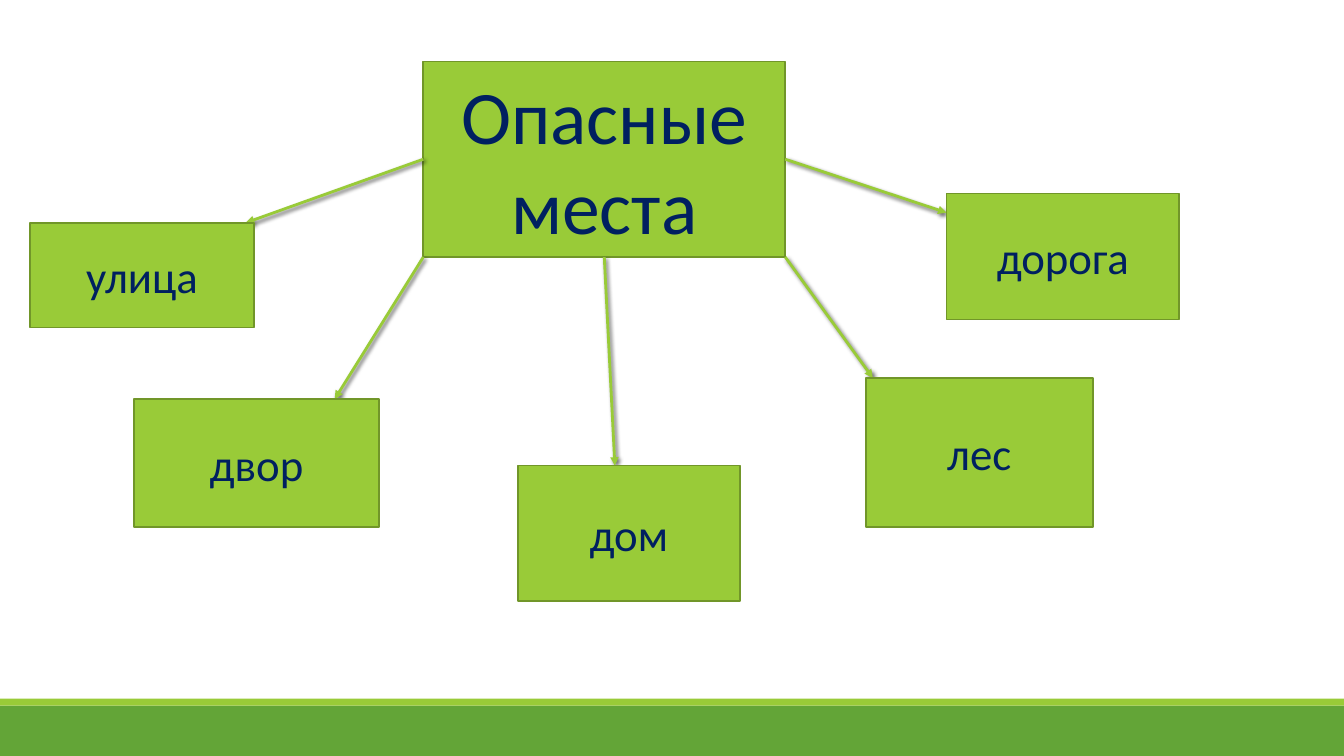
from lxml import etree
from pptx import Presentation
from pptx.dml.color import RGBColor
from pptx.enum.shapes import MSO_CONNECTOR, MSO_SHAPE
from pptx.enum.text import MSO_ANCHOR, PP_ALIGN
from pptx.oxml import parse_xml
from pptx.oxml.ns import nsdecls, qn
from pptx.util import Pt

WIDTH, HEIGHT = 960, 540
COLOURS = {"band": "63A537", "lime": "99CB38", "outline": "719629",
           "text": "002060", "shadow": "000000", "background": "FFFFFF"}
TOPIC_BOX = (302.4, 43.9, 258.5, 139.7)

# Name, box, start as a share of the topic box, arrow tip as an offset in the box
PLACES = [
    ("улица", (21.6, 159.1, 159.8, 74.9), (0, 0.5), (154, 0)),
    ("двор", (95.8, 285.1, 175, 91.4), (0, 1), (143.3, 0)),
    ("дом", (370.1, 332.6, 158.4, 96.5), (0.5, 1), (69.1, 0)),
    ("лес", (618.5, 270, 162, 106.6), (1, 1), (5, 0)),
    ("дорога", (676.1, 138.2, 166.3, 90), (1, 0.5), (0, 13.7)),
]

SHADOW_XML = f"""<a:effectLst {nsdecls("a")}>
  <a:outerShdw blurRad="{Pt(3)}" dist="{Pt(2)}" dir="2700000" rotWithShape="0">
    <a:srgbClr val="{COLOURS["shadow"]}"><a:alpha val="60000"/></a:srgbClr>
  </a:outerShdw>
</a:effectLst>"""


def colour(name):
    return RGBColor.from_string(COLOURS[name])


def set_format(target, values):
    for name, value in values.items():
        setattr(target, name, value)


def add_rectangle(slide, box, fill):
    shape = slide.shapes.add_shape(MSO_SHAPE.RECTANGLE, *map(Pt, box))
    shape.shadow.inherit = False
    shape.fill.solid()
    shape.fill.fore_color.rgb = colour(fill)
    shape.line.fill.background()
    return shape


def add_label(slide, box, text, size):
    shape = add_rectangle(slide, box, "lime")
    shape.line.color.rgb = colour("outline")
    shape.line.width = Pt(1.25)
    frame = shape.text_frame
    set_format(frame, {"word_wrap": True, "vertical_anchor": MSO_ANCHOR.MIDDLE})
    paragraph = frame.paragraphs[0]
    paragraph.alignment = PP_ALIGN.CENTER
    run = paragraph.add_run()
    run.text = text
    set_format(run.font, {"name": "Calibri", "size": Pt(size)})
    run.font.color.rgb = colour("text")


def add_arrow(slide, start, end):
    connector = slide.shapes.add_connector(MSO_CONNECTOR.STRAIGHT, *map(Pt, start + end))
    connector.line.color.rgb = colour("lime")
    connector.line.width = Pt(2)
    line = connector.line._get_or_add_ln()
    etree.SubElement(line, qn("a:tailEnd"), type="triangle")
    line.addnext(parse_xml(SHADOW_XML))


def add_footer(slide, box):
    left, top, width, height = box
    stripe = 5
    add_rectangle(slide, (left, top + stripe, width, height - stripe), "band")
    add_rectangle(slide, (left, top, width, stripe), "lime")


def add_diagram(slide, box):
    left, top, width, height = box
    add_label(slide, box, "Опасные места", 54)

    # Arrows lie beneath the place boxes
    for _, place, (across, down), (tip_x, tip_y) in PLACES:
        start = (left + across * width, top + down * height)
        add_arrow(slide, start, (place[0] + tip_x, place[1] + tip_y))
    for name, place, _, _ in PLACES:
        add_label(slide, place, name, 32)


def main():
    presentation = Presentation()
    set_format(presentation, {"slide_width": Pt(WIDTH), "slide_height": Pt(HEIGHT)})
    slide = presentation.slides.add_slide(presentation.slide_layouts[6])
    slide.background.fill.solid()
    slide.background.fill.fore_color.rgb = colour("background")
    add_footer(slide, (0, 499, WIDTH, 41))
    add_diagram(slide, TOPIC_BOX)
    presentation.save("out.pptx")


if __name__ == "__main__":
    main()
